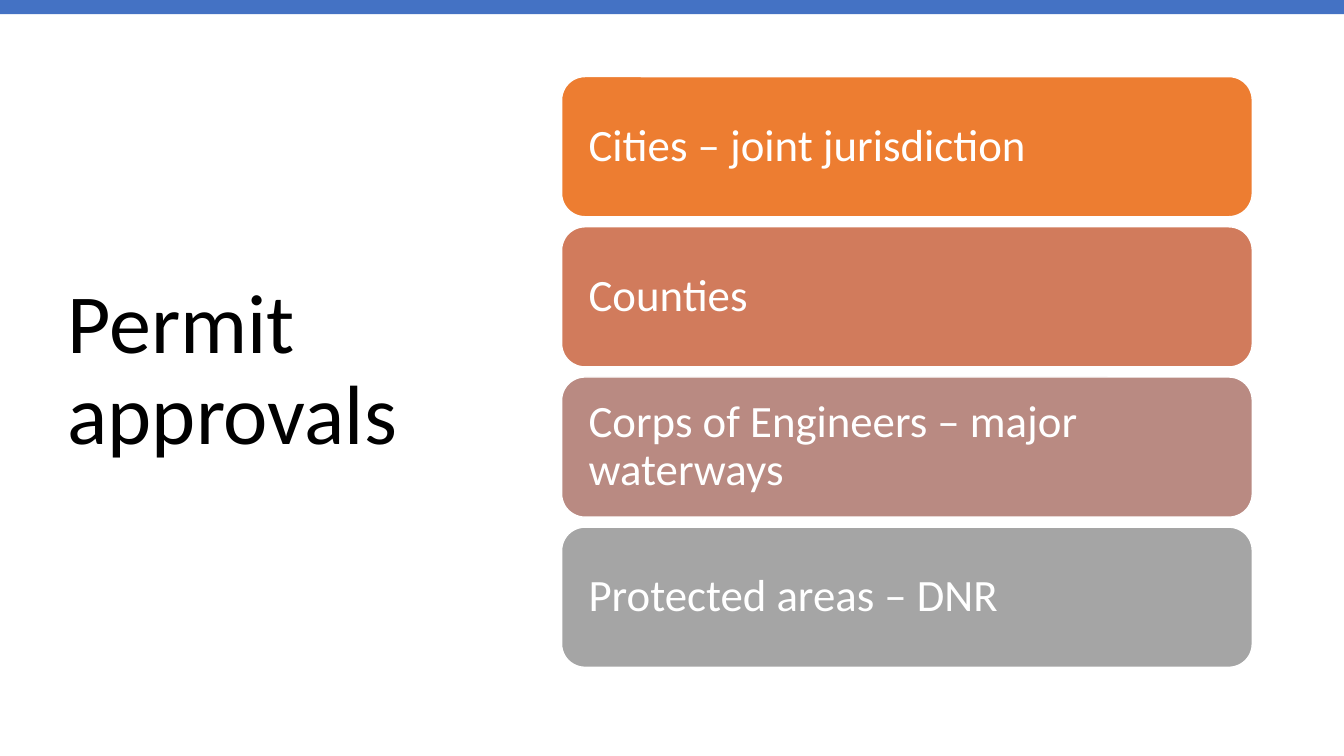
from pptx import Presentation
from pptx.dml.color import RGBColor
from pptx.enum.shapes import MSO_SHAPE
from pptx.enum.text import MSO_ANCHOR, PP_ALIGN
from pptx.util import Inches, Pt

RECTANGLE = MSO_SHAPE.RECTANGLE
ROUNDED = MSO_SHAPE.ROUNDED_RECTANGLE
MIDDLE = MSO_ANCHOR.MIDDLE
LEFT = PP_ALIGN.LEFT
TITLE_ONLY = 5

COLOURS = {
    "bar": "4472C4",
    "cities": "ED7D31",
    "counties": "D17B5C",
    "corps": "B98A82",
    "protected": "A5A5A5",
    "white": "FFFFFF",
    "black": "000000",
}

APPROVALS = [
    ("Cities – joint jurisdiction", "cities"),
    ("Counties", "counties"),
    ("Corps of Engineers – major waterways", "corps"),
    ("Protected areas – DNR", "protected"),
]
CARD_TOP = 0.76
CARD_PITCH = 1.49


def colour(name):
    return RGBColor.from_string(COLOURS[name])


def apply_format(target, values):
    for name, value in values.items():
        setattr(target, name, value)


def write_text(box, text, size, colour_name, insets):
    frame = box.text_frame
    apply_format(frame, {"word_wrap": True, "vertical_anchor": MIDDLE, **insets})
    para = frame.paragraphs[0]
    apply_format(para, {"alignment": LEFT, "line_spacing": 0.9})
    span = para.add_run()
    span.text = text
    apply_format(span.font, {"name": "Calibri", "size": Pt(size)})
    span.font.color.rgb = colour(colour_name)


def add_title(page, text):
    title = page.shapes.title
    apply_format(title, {
        "left": Inches(0.57), "top": Inches(0.68),
        "width": Inches(4.16), "height": Inches(6.02),
    })
    write_text(title, text, 60, "black", {})


def add_block(page, preset, left, top, width, height, fill):
    block = page.shapes.add_shape(
        preset, Inches(left), Inches(top), Inches(width), Inches(height))
    block.shadow.inherit = False
    block.fill.solid()
    block.fill.fore_color.rgb = colour(fill)
    block.line.fill.background()
    return block


def add_card(page, text, fill, top):
    card = add_block(page, ROUNDED, 5.57, top, 6.85, 1.39, fill)
    card.line.color.rgb = colour("white")
    card.line.width = Pt(1)
    insets = {f"margin_{side}": Inches(0.2)
              for side in ("left", "top", "right", "bottom")}
    write_text(card, text, 32, "white", insets)


def main():
    deck = Presentation()
    deck.slide_width = Inches(13.33)
    deck.slide_height = Inches(7.5)
    page = deck.slides.add_slide(deck.slide_layouts[TITLE_ONLY])
    add_title(page, "Permit approvals")
    add_block(page, RECTANGLE, 0, 0, 13.33, 0.14, "bar")
    for index, (text, fill) in enumerate(APPROVALS):
        add_card(page, text, fill, CARD_TOP + index * CARD_PITCH)
    deck.save("out.pptx")


if __name__ == "__main__":
    main()
